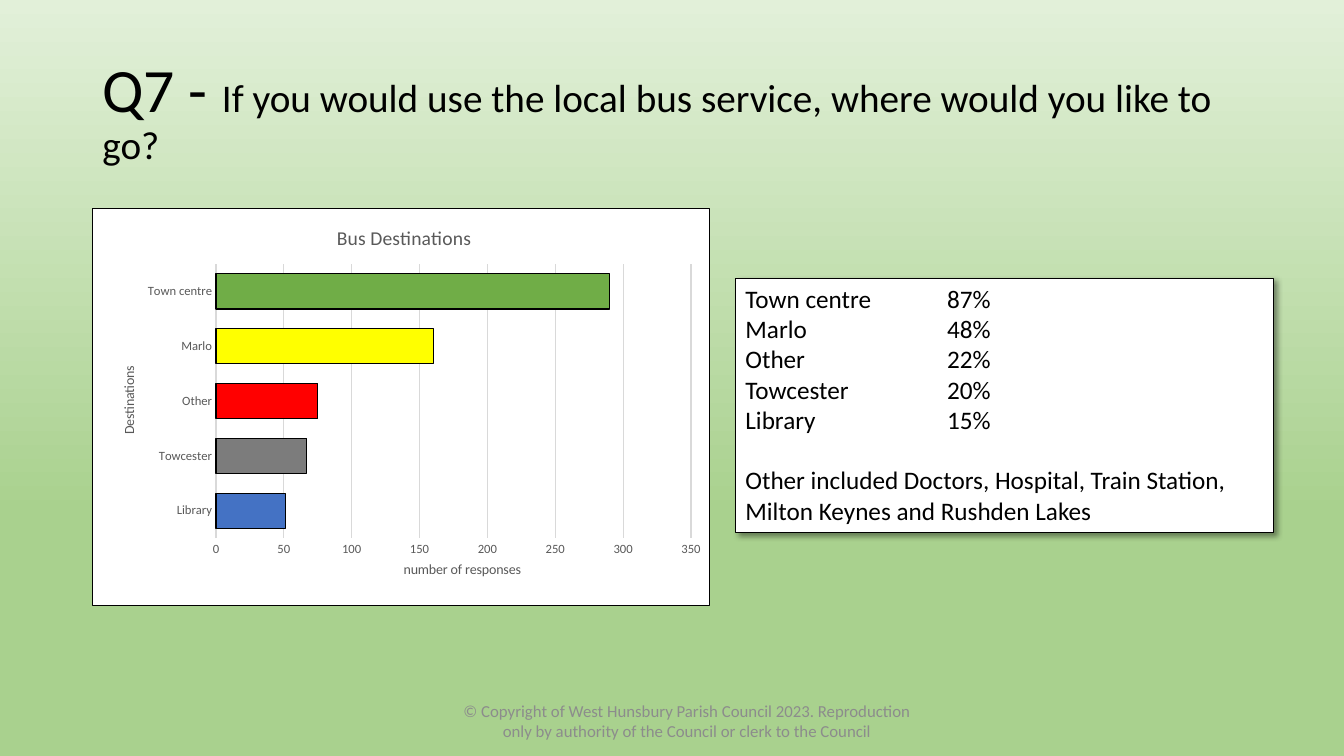
"""Build the survey slide on bus destinations."""
from copy import deepcopy

from pptx import Presentation
from pptx.chart.data import CategoryChartData
from pptx.dml.color import RGBColor
from pptx.enum.chart import XL_CHART_TYPE as ChartType, XL_TICK_MARK as TickMark
from pptx.enum.shapes import MSO_SHAPE as Preset
from pptx.enum.text import MSO_ANCHOR as Anchor, MSO_AUTO_SIZE as AutoSize, PP_ALIGN as Align
from pptx.oxml import parse_xml
from pptx.oxml.ns import nsdecls, qn
from pptx.util import Pt

TITLE = [("Q7 - ", "heading"), ("If you would use the local bus service, where would you like to go?", "question")]
RESULTS = [
    ("Library", 51, "15%", "4472C4"),
    ("Towcester", 67, "20%", "7C7C7C"),
    ("Other", 75, "22%", "FF0000"),
    ("Marlo", 160, "48%", "FFFF00"),
    ("Town centre", 290, "87%", "70AD47"),
]
REMARK = "Other included Doctors, Hospital, Train Station, Milton Keynes and Rushden Lakes"
COPYRIGHT = ("© Copyright of West Hunsbury Parish Council 2023. "
             "Reproduction only by authority of the Council or clerk to the Council")
CHART_TITLES = {"chart": "Bus Destinations", "category": "Destinations", "value": "number of responses"}

THEME = {
    "font": "Calibri",
    "colors": {"ink": "000000", "paper": "FFFFFF", "label": "595959", "grid": "D9D9D9", "faint": "8C8C8C"},
    "sizes": {"heading": 44, "question": 28, "body": 18, "chart": 14, "footer": 12, "axis": 10, "tick": 9},
    "background": [(0, "E2F0D9"), (0.68, "A9D18E"), (1, "A9D18E")],
    "line": 0.75,
}
BOXES = {
    "title": (66, 29, 828, 104.4),
    "chart": (65.8, 148.6, 441.4, 284.4),
    "summary": (525.4, 198.7, 384.2, 181.4),
    "footer": (318, 500.4, 345.6, 28.8),
}
LAYOUTS = {
    "plot": {"x": 0.2, "y": 0.14, "w": 0.77, "h": 0.69},
    "chart": {"x": 0.39, "y": 0.03},
    "category": {"x": 0.04, "y": 0.39},
    "value": {"x": 0.5, "y": 0.88},
}
PERCENT_TAB = Pt(144)


def color(name):
    return RGBColor.from_string(THEME["colors"].get(name, name))


def lengths(name):
    return [Pt(value) for value in BOXES[name]]


def apply(target, values):
    for name, value in values.items():
        setattr(target, name, value)


def format_font(font, size, ink="ink"):
    apply(font, {"name": THEME["font"], "size": Pt(THEME["sizes"][size]), "bold": False})
    font.color.rgb = color(ink)


def add_run(paragraph, text, size, ink="ink"):
    run = paragraph.add_run()
    run.text = text
    format_font(run.font, size, ink)


def paint(part, fill, line):
    if fill:
        part.fill.solid()
        part.fill.fore_color.rgb = color(fill)
    part.line.color.rgb = color(line)
    part.line.width = Pt(THEME["line"])


def paint_background(slide):
    fill = slide.background.fill
    fill.gradient()
    fill.gradient_angle = 270
    stop_list = slide.element.find(".//" + qn("a:gsLst"))
    stop_list.append(deepcopy(stop_list[0]))
    for stop, (position, shade) in zip(fill.gradient_stops, THEME["background"]):
        stop.position = position
        stop.color.rgb = color(shade)


def add_title(slide):
    title = slide.shapes.title
    apply(title, dict(zip(("left", "top", "width", "height"), lengths("title"))))
    apply(title.text_frame, {"word_wrap": True, "auto_size": AutoSize.NONE, "vertical_anchor": Anchor.MIDDLE})
    paragraph = title.text_frame.paragraphs[0]
    apply(paragraph, {"alignment": Align.LEFT, "line_spacing": 0.9})
    for text, size in TITLE:
        add_run(paragraph, text, size)


def place(element, name):
    layout = element.find(qn("c:layout"))
    if layout is not None:
        element.remove(layout)
    values = LAYOUTS[name]
    target = '<c:layoutTarget val="inner"/>' if "w" in values else ""
    modes = "".join(f'<c:{key}Mode val="edge"/>' for key in "xy")
    places = "".join(f'<c:{key} val="{value}"/>' for key, value in values.items())
    layout = parse_xml(f'<c:layout {nsdecls("c")}><c:manualLayout>{target}{modes}{places}'
                       '</c:manualLayout></c:layout>')
    element.insert(0 if element.find(qn("c:tx")) is None else 1, layout)


def add_chart_title(owner, title, name):
    frame = title.text_frame
    add_run(frame.paragraphs[0], CHART_TITLES[name], "chart" if name == "chart" else "axis", "label")
    if name == "category":
        body = frame._txBody.find(qn("a:bodyPr"))
        body.set("rot", "-5400000")
        body.set("vert", "horz")
    place(owner.find(".//" + qn("c:title")), name)


def add_destination_chart(slide):
    data = CategoryChartData()
    data.categories = [name for name, *_ in RESULTS]
    data.add_series("Series 1", [count for _, count, *_ in RESULTS])
    chart = slide.shapes.add_chart(ChartType.BAR_CLUSTERED, *lengths("chart"), data).chart
    apply(chart, {"has_legend": False, "has_title": True})
    format_font(chart.font, "axis")
    frame = parse_xml(
        f'<c:spPr {nsdecls("c", "a")}><a:solidFill><a:srgbClr val="{color("paper")}"/></a:solidFill>'
        f'<a:ln w="{Pt(THEME["line"])}"><a:solidFill><a:srgbClr val="{color("ink")}"/></a:solidFill></a:ln></c:spPr>')
    chart.element.find(qn("c:txPr")).addprevious(frame)
    plot = chart.plots[0]
    apply(plot, {"gap_width": 56, "overlap": 20, "vary_by_categories": False})
    series = plot.series[0]
    series.invert_if_negative = False
    paint(series.format, RESULTS[0][3], "ink")
    for index, (*_, shade) in enumerate(RESULTS):
        paint(series.points[index].format, shade, "ink")
    category, value = chart.category_axis, chart.value_axis
    apply(value, {"minimum_scale": 0, "maximum_scale": 350, "major_unit": 50, "has_major_gridlines": True})
    apply(category, {"has_major_gridlines": False})
    for name, axis in (("category", category), ("value", value)):
        apply(axis, {"has_title": True, "major_tick_mark": TickMark.NONE, "minor_tick_mark": TickMark.NONE})
        format_font(axis.tick_labels.font, "tick", "label")
        add_chart_title(axis._element, axis.axis_title, name)
    paint(category.format, None, "grid")
    paint(value.major_gridlines.format, None, "grid")
    value.format.line.fill.background()
    add_chart_title(chart.element, chart.chart_title, "chart")
    place(chart.element.find(".//" + qn("c:plotArea")), "plot")


def add_summary(slide):
    shape = slide.shapes.add_shape(Preset.RECTANGLE, *lengths("summary"))
    paint(shape, "paper", "ink")
    shape.shadow.inherit = False
    shape.element.spPr.find(qn("a:effectLst")).append(parse_xml(
        f'<a:outerShdw {nsdecls("a")} blurRad="{Pt(4)}" dist="{Pt(3)}" dir="2700000" algn="tl" rotWithShape="0">'
        f'<a:srgbClr val="{color("ink")}"><a:alpha val="40000"/></a:srgbClr></a:outerShdw>'))
    frame = shape.text_frame
    apply(frame, {"word_wrap": True, "vertical_anchor": Anchor.TOP, "auto_size": AutoSize.SHAPE_TO_FIT_TEXT})
    lines = [f"{name}\t{percent}" for name, _, percent, _ in reversed(RESULTS)] + [REMARK]
    for index, line in enumerate(lines):
        paragraph = frame.add_paragraph() if index else frame.paragraphs[0]
        paragraph.alignment = Align.LEFT
        add_run(paragraph, line, "body")
        if line == REMARK:
            paragraph.space_before = Pt(THEME["sizes"]["body"] * 1.2)
        else:
            paragraph._p.get_or_add_pPr().append(parse_xml(
                f'<a:tabLst {nsdecls("a")}><a:tab pos="{PERCENT_TAB}" algn="l"/></a:tabLst>'))


def add_footer(slide):
    frame = slide.shapes.add_textbox(*lengths("footer")).text_frame
    apply(frame, {"word_wrap": True, "vertical_anchor": Anchor.MIDDLE})
    paragraph = frame.paragraphs[0]
    paragraph.alignment = Align.CENTER
    add_run(paragraph, COPYRIGHT, "footer", "faint")


def main():
    presentation = Presentation()
    apply(presentation, {"slide_width": Pt(960), "slide_height": Pt(540)})
    slide = presentation.slides.add_slide(presentation.slide_layouts[5])
    for add_part in (paint_background, add_title, add_summary, add_destination_chart, add_footer):
        add_part(slide)
    presentation.save("out.pptx")


if __name__ == "__main__":
    main()
